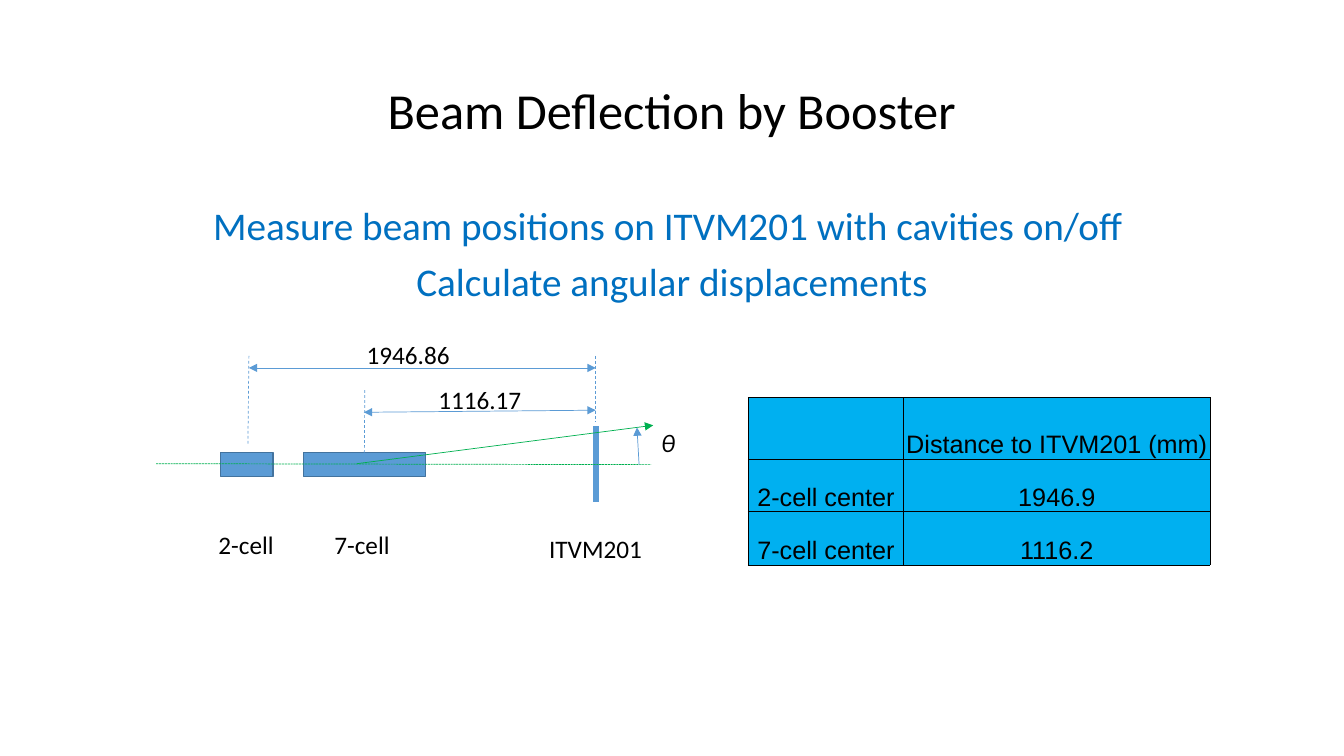
"""Build the slide on beam deflection by the booster."""
from lxml import etree
from pptx import Presentation
from pptx import util as u
from pptx.dml.color import RGBColor
from pptx.enum import dml, shapes, text
from pptx.oxml.ns import qn

Pt = u.Pt
BLUE, GREEN, BLACK = "5B9BD5", "00B050", "000000"
DASH, SYS_DASH = dml.MSO_LINE.DASH, dml.MSO_LINE.SQUARE_DOT
CENTER = text.PP_ALIGN.CENTER


def rgb(value):
    return RGBColor.from_string(value)


def add_run(p, words, size, color=BLACK, font="Calibri", italic=False):
    r = p.add_run()
    r.text = words
    r.font.size, r.font.name, r.font.italic = Pt(size), font, italic
    r.font.color.rgb = rgb(color)


prs = Presentation()
prs.slide_width, prs.slide_height = Pt(960), Pt(540)
s = prs.slides.add_slide(prs.slide_layouts[6])

headings = [
    (28.8, 104.4, text.MSO_ANCHOR.MIDDLE, 36, BLACK, ["Beam Deflection by Booster"]),
    (144, 342.7, text.MSO_ANCHOR.TOP, 28, "0070C0",
     ["Measure beam positions on ITVM201 with cavities on/off ",
      "Calculate angular displacements"]),
]
for top, height, anchor, size, color, lines in headings:
    tf = s.shapes.add_textbox(Pt(66), Pt(top), Pt(828), Pt(height)).text_frame
    tf.word_wrap, tf.vertical_anchor = True, anchor
    for i, words in enumerate(lines):
        p = tf.add_paragraph() if i else tf.paragraphs[0]
        p.alignment, p.line_spacing = CENTER, 0.9
        p.space_before = Pt(10 if i else 0)
        add_run(p, words, size, color)

for left, width in [(157.7, 37.4), (216.7, 87.1)]:
    cavity = s.shapes.add_shape(shapes.MSO_SHAPE.RECTANGLE,
                                Pt(left), Pt(323.3), Pt(width), Pt(17.3))
    cavity.shadow.inherit = False
    cavity.fill.solid()
    cavity.fill.fore_color.rgb = rgb(BLUE)
    cavity.line.color.rgb = rgb("43739E")
    cavity.line.width = Pt(1)

drawn_lines = [
    (425.5, 304.6, 425.5, 358.6, BLUE, 4.5, None, []),
    (111.6, 331.2, 465.1, 331.9, GREEN, 0.5, SYS_DASH, []),
    (254.9, 331.2, 466.6, 303.8, GREEN, 0.5, None, ["tailEnd"]),
    (456.5, 331.9, 455, 305.3, BLUE, 0.5, None, ["tailEnd"]),
    (425.5, 254.2, 425.5, 301.7, BLUE, 0.5, DASH, []),
    (177.8, 254.2, 177.1, 316.8, BLUE, 0.5, DASH, []),
    (259.9, 294.5, 425.5, 293, BLUE, 0.5, None, ["headEnd", "tailEnd"]),
    (177.8, 262.8, 425.5, 262.8, BLUE, 0.5, None, ["headEnd", "tailEnd"]),
    (260.6, 278.6, 260.25, 323.3, BLUE, 0.5, DASH, []),
]
for x1, y1, x2, y2, color, width, dash, ends in drawn_lines:
    line = s.shapes.add_connector(shapes.MSO_CONNECTOR.STRAIGHT,
                                  Pt(x1), Pt(y1), Pt(x2), Pt(y2))
    line.line.color.rgb = rgb(color)
    line.line.width = Pt(width)
    if dash:
        line.line.dash_style = dash
    for end in ends:
        etree.SubElement(line.line._get_or_add_ln(), qn("a:" + end), type="triangle")
    etree.SubElement(line._element.spPr, qn("a:effectLst"))
line.end_connect(cavity, 0)

labels = [
    ("2-cell", 149, 374.4, 54.7), ("7-cell", 231.8, 374.4, 54.7),
    ("ITVM201", 385.2, 377.3, 81.4), ("θ", 465.1, 301.7, 24.5),
    ("1946.86", 254.9, 239, 74.2), ("1116.17", 306, 270.7, 74.2),
]
for words, left, top, width in labels:
    tf = s.shapes.add_textbox(Pt(left), Pt(top), Pt(width), Pt(29)).text_frame
    tf.word_wrap = False
    tf.auto_size = text.MSO_AUTO_SIZE.SHAPE_TO_FIT_TEXT
    add_run(tf.paragraphs[0], words, 18, italic=words == "θ")

rows = [("", "Distance to ITVM201 (mm)"),
        ("2-cell center", "1946.9"), ("7-cell center", "1116.2")]
table = s.shapes.add_table(3, 2, Pt(534.5), Pt(284), Pt(329.8), Pt(119.5)).table
table.first_row = table.horz_banding = False
for column, width in zip(table.columns, (110.9, 218.9)):
    column.width = Pt(width)
for row, height in zip(table.rows, (44, 37.5, 38)):
    row.height = Pt(height)
for i, values in enumerate(rows):
    for j, words in enumerate(values):
        cell = table.cell(i, j)
        cell.margin_left = cell.margin_right = cell.margin_top = Pt(0.7)
        cell.margin_bottom = Pt(0)
        cell.vertical_anchor = text.MSO_ANCHOR.BOTTOM
        for side in ("lnL", "lnR", "lnT", "lnB"):
            ln = etree.SubElement(cell._tc.get_or_add_tcPr(), qn("a:" + side), w=str(Pt(0.5)))
            fill = etree.SubElement(ln, qn("a:solidFill"))
            etree.SubElement(fill, qn("a:srgbClr"), val=BLACK)
        cell.fill.solid()
        cell.fill.fore_color.rgb = rgb("00B0F0")
        if words:
            p = cell.text_frame.paragraphs[0]
            p.alignment = CENTER
            add_run(p, words, 18, font="Arial")

prs.save("out.pptx")
